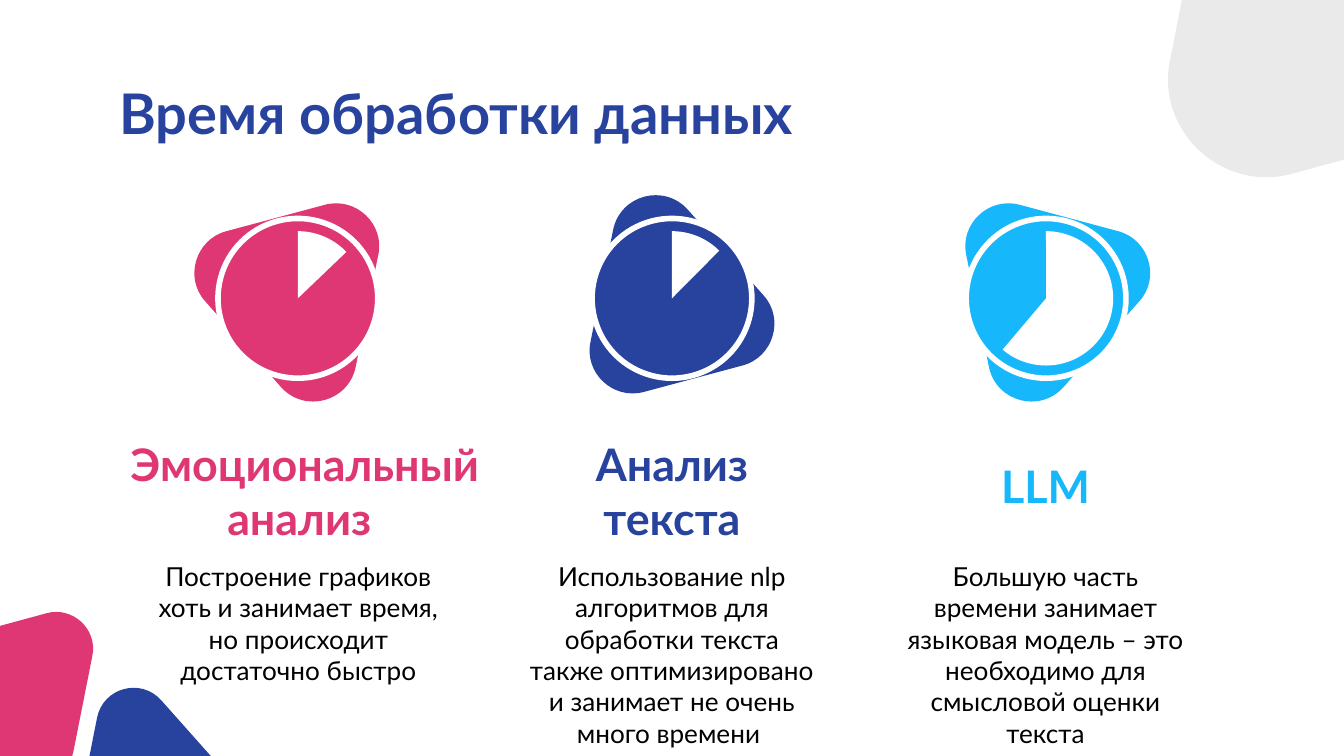
from dataclasses import dataclass

from lxml import etree
from pptx import Presentation
from pptx.dml.color import RGBColor
from pptx.enum.shapes import MSO_SHAPE
from pptx.enum.text import MSO_ANCHOR, MSO_AUTO_SIZE, PP_ALIGN
from pptx.oxml.ns import qn
from pptx.util import Cm, Pt

OVAL, PIE = MSO_SHAPE.OVAL, MSO_SHAPE.PIE
TOP, BOTTOM = MSO_ANCHOR.TOP, MSO_ANCHOR.BOTTOM
LEFT, CENTER = PP_ALIGN.LEFT, PP_ALIGN.CENTER
NO_FIT = MSO_AUTO_SIZE.NONE


@dataclass(frozen=True)
class Theme:
    font: str = "Lato"
    pink: RGBColor = RGBColor(0xDF, 0x36, 0x74)
    blue: RGBColor = RGBColor(0x28, 0x43, 0x9E)
    cyan: RGBColor = RGBColor(0x16, 0xB8, 0xFB)
    gray: RGBColor = RGBColor(0xEA, 0xEA, 0xEA)
    white: RGBColor = RGBColor(0xFF, 0xFF, 0xFF)
    black: RGBColor = RGBColor(0, 0, 0)
    title: Pt = Pt(30)
    heading: Pt = Pt(24)
    body: Pt = Pt(14)


THEME = Theme()


@dataclass(frozen=True)
class Stage:
    heading: str
    body: str
    color: RGBColor
    sweep: float
    badge_turn: float
    badge_shift: tuple
    heading_width: float = 6.05
    heading_bottom: float = 10.54
    heading_shift: float = 0


STAGES = (
    Stage("Эмоциональный анализ ",
          "Построение графиков хоть и занимает время, но происходит достаточно быстро",
          THEME.pink, 46.26, 165, (0.04, 0.2),
          heading_width=7.85, heading_shift=0.12),
    Stage("Анализ текста",
          "Использование nlp алгоритмов для обработки текста также оптимизировано "
          "и занимает не очень много времени ",
          THEME.blue, 44.81, 345, (-0.06, -0.2)),
    Stage("LLM",
          "Большую часть времени занимает языковая модель – это необходимо "
          "для смысловой оценки текста",
          THEME.cyan, 220.18, 195, (-0.03, 0.2), heading_bottom=9.93),
)

TEXT_START, TEXT_STEP = 5.64, 7.06
DIAL_START, DIAL_STEP, DIAL_Y = 5.63, 7.07, 5.64

TRIANGLE_GRID = 320
TRIANGLE_PATH = (
    ("moveTo", (247, 320)),
    ("lnTo", (73, 320)),
    ("cubicBezTo", (19, 320), (-17, 262), (8, 214)),
    ("lnTo", (94, 41)),
    ("cubicBezTo", (121, -14), (199, -14), (226, 41)),
    ("lnTo", (312, 214)),
    ("cubicBezTo", (337, 262), (301, 320), (247, 320)),
    ("close",),
)


def paint(shape, color):
    shape.shadow.inherit = False
    shape.fill.solid()
    shape.fill.fore_color.rgb = color
    shape.line.fill.background()


def curve_outline(shape):
    outline = next(shape.element.iter(qn("a:path")))
    for step in list(outline):
        outline.remove(step)
    outline.set("w", str(TRIANGLE_GRID))
    outline.set("h", str(TRIANGLE_GRID))
    for command, *points in TRIANGLE_PATH:
        step = etree.SubElement(outline, qn(f"a:{command}"))
        for x, y in points:
            etree.SubElement(step, qn("a:pt"), x=str(x), y=str(y))


def add_triangle(slide, center_x, center_y, size, color, turn):
    left, top = Cm(center_x - size / 2), Cm(center_y - size / 2)
    right, bottom = left + Cm(size), top + Cm(size)
    builder = slide.shapes.build_freeform(left, top)
    builder.add_line_segments([(right, top), (right, bottom), (left, bottom)])
    triangle = builder.convert_to_shape()
    curve_outline(triangle)
    triangle.rotation = turn
    paint(triangle, color)


def add_round(slide, kind, center_x, diameter, color):
    shape = slide.shapes.add_shape(
        kind, Cm(center_x - diameter / 2), Cm(DIAL_Y - diameter / 2),
        Cm(diameter), Cm(diameter))
    paint(shape, color)
    return shape


def add_dial(slide, center_x, stage):
    shift_x, shift_y = stage.badge_shift
    add_triangle(slide, center_x + shift_x, DIAL_Y + shift_y,
                 3.56, stage.color, stage.badge_turn)
    face = add_round(slide, OVAL, center_x, 3.02, stage.color)
    face.line.color.rgb = THEME.white
    face.line.width = Pt(3)
    wedge = add_round(slide, PIE, center_x, 2.54, THEME.white)
    wedge.adjustments[0] = 270 * 0.6
    wedge.adjustments[1] = (270 + stage.sweep) % 360 * 0.6


def write(box, text, size, color, bold=False, anchor=TOP, align=CENTER):
    frame = box.text_frame
    frame.word_wrap = True
    frame.auto_size = NO_FIT
    frame.vertical_anchor = anchor
    frame.margin_left = frame.margin_right = Cm(0.25)
    frame.margin_top = frame.margin_bottom = Cm(0.25)
    para = frame.paragraphs[0]
    para.text = text
    para.alignment = align
    para.font.name = THEME.font
    para.font.size = size
    para.font.bold = bold
    para.font.color.rgb = color


def add_text(slide, center_x, top, width, height, text, *style, **options):
    box = slide.shapes.add_textbox(
        Cm(center_x - width / 2), Cm(top), Cm(width), Cm(height))
    write(box, text, *style, **options)


def add_title(slide, text):
    title = slide.shapes.title
    title.left, title.top = Cm(2.01), Cm(1.24)
    title.width, title.height = Cm(21.41), Cm(1.6)
    write(title, text, THEME.title, THEME.blue, bold=True, align=LEFT)


def add_caption(slide, center_x, stage):
    add_text(slide, center_x, 10.34, 6.05, 2.03,
             stage.body, THEME.body, THEME.black)
    add_text(slide, center_x + stage.heading_shift, stage.heading_bottom - 1.27,
             stage.heading_width, 1.27, stage.heading,
             THEME.heading, stage.color, bold=True, anchor=BOTTOM)


def main():
    deck = Presentation()
    deck.slide_width, deck.slide_height = Cm(25.4), Cm(14.29)
    slide = deck.slides.add_slide(deck.slide_layouts[5])
    add_triangle(slide, 25.48, -1.22, 8.13, THEME.gray, 344.7)
    add_triangle(slide, 2.74, 14.5, 3.05, THEME.blue, 344.8)
    add_triangle(slide, 0.48, 13.28, 3.05, THEME.pink, 164.8)
    add_title(slide, "Время обработки данных")
    for column, stage in enumerate(STAGES):
        add_caption(slide, TEXT_START + column * TEXT_STEP, stage)
        add_dial(slide, DIAL_START + column * DIAL_STEP, stage)
    deck.save("out.pptx")


if __name__ == "__main__":
    main()
